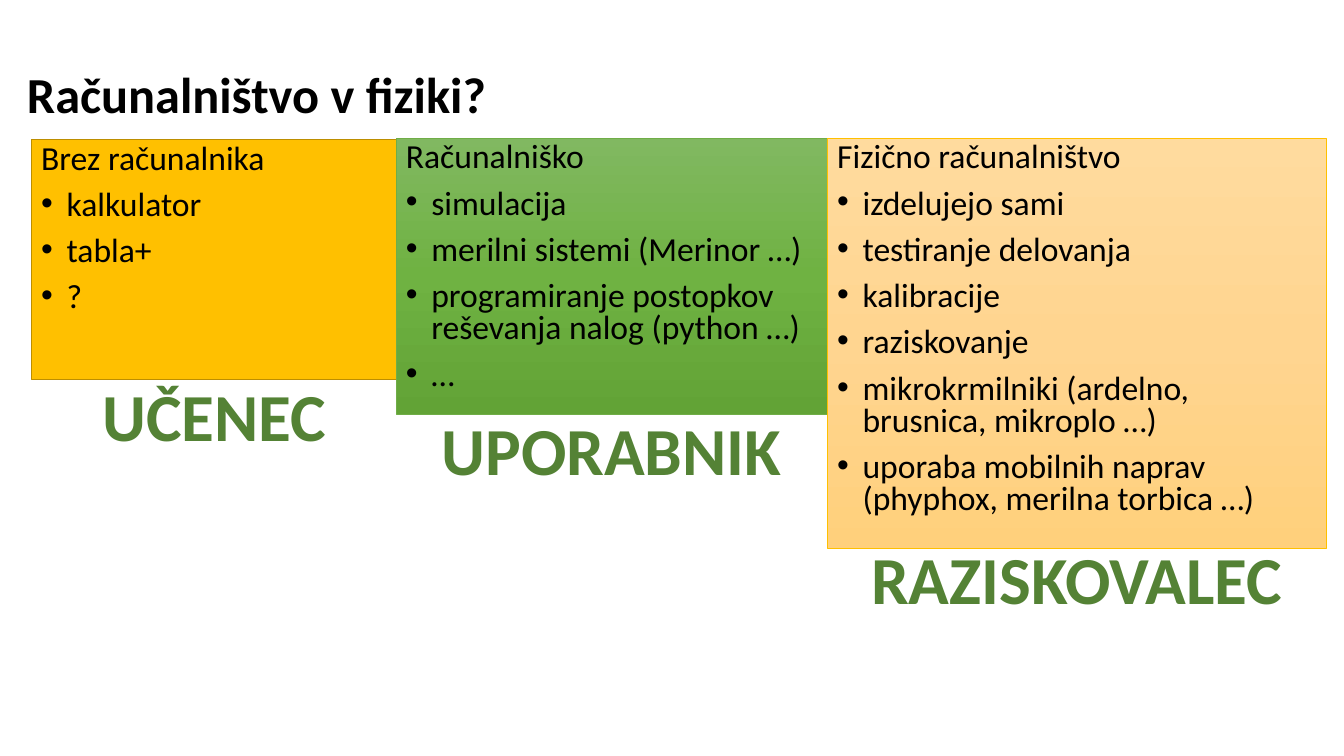
import copy

from pptx import Presentation
from pptx import util as u
from pptx.dml.color import RGBColor
from pptx.enum import shapes, text
from pptx.oxml import parse_xml
from pptx.oxml.ns import nsdecls, qn

FONT = "Calibri"
BLACK = RGBColor(0x00, 0x00, 0x00)
AMBER = RGBColor(0xFF, 0xC0, 0x00)
AMBER_DARK = RGBColor(0xBD, 0x8E, 0x00)
GREEN = RGBColor(0x70, 0xAD, 0x47)
ROLE_GREEN = RGBColor(0x54, 0x82, 0x35)
GREENS = [RGBColor(0x81, 0xB8, 0x61), RGBColor(0x6F, 0xB2, 0x42), RGBColor(0x62, 0xA3, 0x36)]
PEACHES = [RGBColor(0xFF, 0xDB, 0x9E), RGBColor(0xFF, 0xD5, 0x90), RGBColor(0xFF, 0xD0, 0x7C)]

QUESTION = "Računalništvo v fiziki?"
STAGES = [
    {"heading": "Brez računalnika",
     "items": ["kalkulator", "tabla+", "?"],
     "role": "UČENEC", "role_top": 9.3, "role_width": 6.2,
     "area": (0.79, 3.51, 9.22, 6.05),
     "fill": [AMBER], "edge": AMBER_DARK, "edge_width": 1},
    {"heading": "Računalniško",
     "items": ["simulacija", "merilni sistemi (Merinor …)",
               "programiranje postopkov reševanja nalog (python …)", "…"],
     "role": "UPORABNIK", "role_top": 10.16, "role_width": 9.17,
     "area": (9.98, 3.48, 10.87, 6.96),
     "fill": GREENS, "edge": GREEN, "edge_width": 0.5},
    {"heading": "Fizično računalništvo",
     "items": ["izdelujejo sami", "testiranje delovanja", "kalibracije", "raziskovanje",
               "mikrokrmilniki (ardelno, brusnica, mikroplo …)",
               "uporaba mobilnih naprav (phyphox, merilna torbica …)"],
     "role": "RAZISKOVALEC", "role_top": 13.41, "role_width": 10.97,
     "area": (20.85, 3.48, 12.57, 10.34),
     "fill": PEACHES, "edge": AMBER, "edge_width": 0.5},
]


def add_words(paragraph, words, size, color, bold=False):
    run = paragraph.add_run()
    run.text = words
    run.font.name = FONT
    run.font.size = u.Pt(size)
    run.font.bold = bold
    run.font.color.rgb = color
    return run


def paint(stage_box, colors):
    fill = stage_box.fill
    if len(colors) == 1:
        fill.solid()
        fill.fore_color.rgb = colors[0]
        return
    fill.gradient()
    fill.gradient_angle = 270
    stops = stage_box._element.spPr.find(".//" + qn("a:gsLst"))
    while len(stops) < len(colors):
        stops.append(copy.deepcopy(stops[0]))
    for i, (stop, color) in enumerate(zip(fill.gradient_stops, colors)):
        stop.position = i / (len(colors) - 1)
        stop.color.rgb = color


def add_bullet(paragraph):
    props = paragraph._p.get_or_add_pPr()
    indent = u.Cm(0.64)
    props.set("marL", str(indent))
    props.set("indent", str(-indent))
    props.append(parse_xml(f'<a:buFont {nsdecls("a")} typeface="Arial"/>'))
    props.append(parse_xml(f'<a:buChar {nsdecls("a")} char="•"/>'))


def add_stage(slide, stage):
    box = slide.shapes.add_shape(shapes.MSO_SHAPE.RECTANGLE, *map(u.Cm, stage["area"]))
    box.shadow.inherit = False
    paint(box, stage["fill"])
    box.line.color.rgb = stage["edge"]
    box.line.width = u.Pt(stage["edge_width"])
    frame = box.text_frame
    frame.word_wrap = True
    frame.vertical_anchor = text.MSO_ANCHOR.TOP
    for i, words in enumerate([stage["heading"], *stage["items"]]):
        paragraph = frame.paragraphs[0] if i == 0 else frame.add_paragraph()
        paragraph.alignment = text.PP_ALIGN.LEFT
        paragraph.line_spacing = 0.8
        if i:
            paragraph.space_before = u.Pt(10)
            add_bullet(paragraph)
        add_words(paragraph, words, 24, BLACK)


def add_role(slide, stage):
    left, _, width, _ = stage["area"]
    role_left = left + (width - stage["role_width"]) / 2
    role = slide.shapes.add_textbox(u.Cm(role_left), u.Cm(stage["role_top"]),
                                    u.Cm(stage["role_width"]), u.Cm(2.31))
    frame = role.text_frame
    frame.word_wrap = False
    frame.auto_size = text.MSO_AUTO_SIZE.SHAPE_TO_FIT_TEXT
    paragraph = frame.paragraphs[0]
    paragraph.alignment = text.PP_ALIGN.CENTER
    run = add_words(paragraph, stage["role"], 48, ROLE_GREEN, True)
    run._r.get_or_add_rPr().insert(0, parse_xml(
        f'<a:ln {nsdecls("a")} w="{u.Pt(0.75)}"><a:solidFill>'
        '<a:srgbClr val="FFFFFF"/></a:solidFill></a:ln>'))


def main():
    deck = Presentation()
    deck.slide_width, deck.slide_height = u.Cm(33.87), u.Cm(19.05)
    slide = deck.slides.add_slide(deck.slide_layouts[6])

    title = slide.shapes.add_textbox(u.Cm(0.43), u.Cm(0.43), u.Cm(33), u.Cm(2.84))
    title.text_frame.word_wrap = True
    title.text_frame.vertical_anchor = text.MSO_ANCHOR.BOTTOM
    heading = title.text_frame.paragraphs[0]
    heading.line_spacing = 0.9
    add_words(heading, QUESTION, 36, BLACK, True)

    for stage in STAGES:
        add_stage(slide, stage)
    for stage in STAGES:
        add_role(slide, stage)

    deck.save("out.pptx")


if __name__ == "__main__":
    main()
